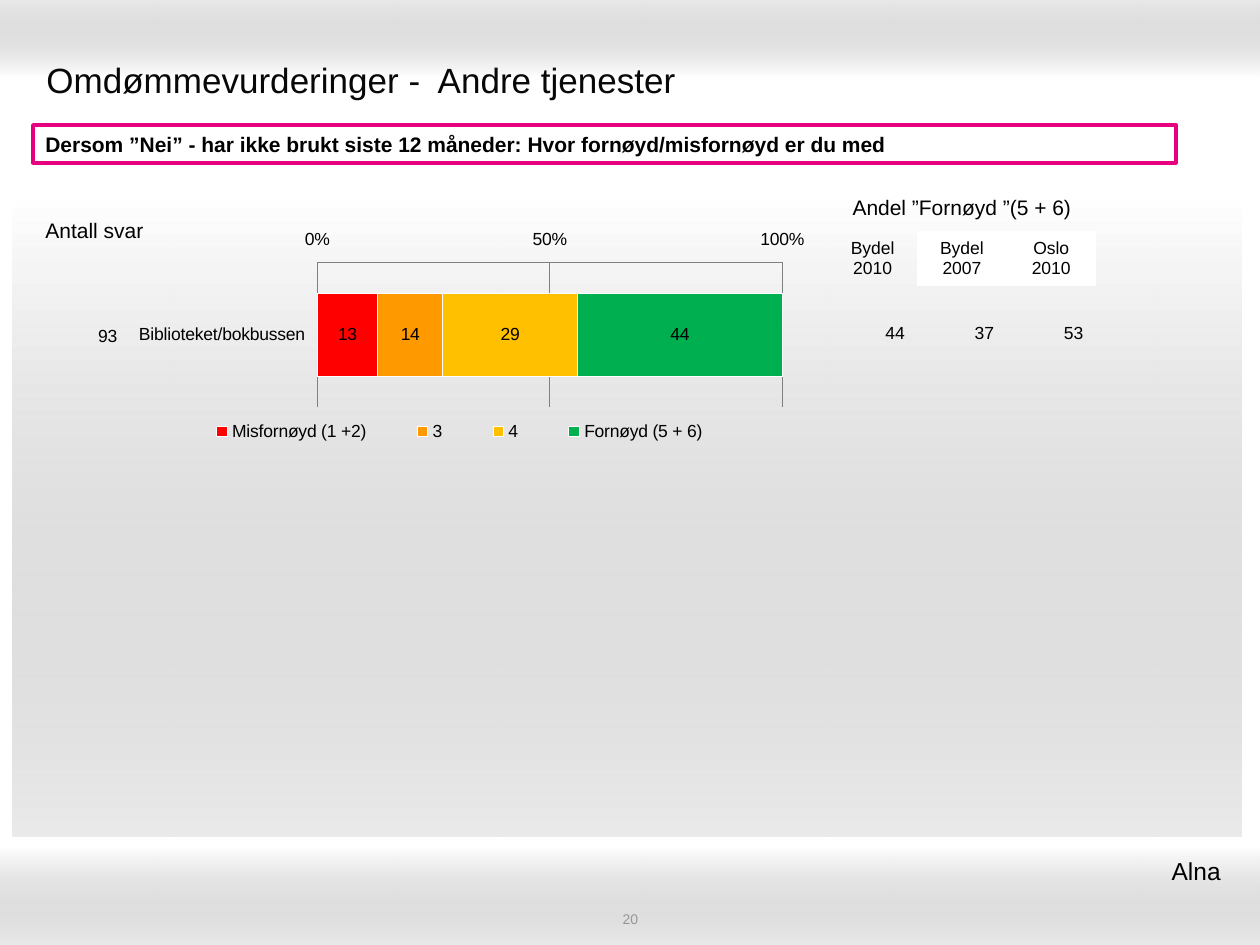
from dataclasses import dataclass

from lxml.etree import SubElement
from pptx import Presentation
from pptx.chart.data import CategoryChartData
from pptx.dml.color import RGBColor
from pptx.enum.chart import XL_CHART_TYPE as ChartType, XL_LEGEND_POSITION as LegendPos
from pptx.enum.chart import XL_TICK_LABEL_POSITION as LabelPos, XL_TICK_MARK as Tick
from pptx.enum.shapes import MSO_SHAPE as Shape
from pptx.enum.text import MSO_ANCHOR as Anchor, PP_ALIGN as Align
from pptx.oxml import parse_xml
from pptx.oxml.ns import nsdecls, qn
from pptx.util import Pt

EMU_PER_PX = 914400 / 126
NO_GRID_STYLE = "{2D5ABB26-0587-4C30-8999-92F81FD0307C}"


@dataclass(frozen=True)
class Theme:
    font: str = "Arial"
    ink: str = "000000"
    title_ink: str = "080808"
    muted: str = "969696"
    white: str = "FFFFFF"
    shade: str = "999999"
    accent: str = "E7007E"
    grid: str = "808080"
    title: int = 20
    place: int = 14
    heading: int = 12
    body: int = 10
    footer: int = 8


THEME = Theme()

RATINGS = [("Misfornøyd (1 +2)", 13, "FF0000"), ("3", 14, "FF9900"),
           ("4", 29, "FFC000"), ("Fornøyd (5 + 6)", 44, "00B050")]
SHARES = [("Bydel\n2010", "44"), ("Bydel\n2007", "37"), ("Oslo\n2010", "53")]


def px(value):
    return round(value * EMU_PER_PX)


def emu_box(box):
    return [px(side) for side in box]


def rgb(value):
    return RGBColor.from_string(value)


def apply_format(target, formats):
    for name, value in formats.items():
        setattr(target, name, value)


def style_font(font, size, color=THEME.ink, bold=False):
    apply_format(font, {"name": THEME.font, "size": Pt(size), "bold": bold})
    font.color.rgb = rgb(color)


def write(frame, text, size, color=THEME.ink, bold=False, align=Align.LEFT):
    frame.text = text
    for paragraph in frame.paragraphs:
        paragraph.alignment = align
        style_font(paragraph.font, size, color, bold)


def add_label(slide, box, text, size, color=THEME.ink, align=Align.LEFT, anchor=Anchor.MIDDLE):
    frame = slide.shapes.add_textbox(*emu_box(box)).text_frame
    apply_format(frame, {"word_wrap": True, "vertical_anchor": anchor})
    write(frame, text, size, color, align=align)


def add_gradient_panel(slide, box, angle):
    panel = slide.shapes.add_shape(Shape.RECTANGLE, *emu_box(box))
    panel.shadow.inherit = False
    panel.line.fill.background()
    panel.fill.background()
    properties = panel._element.spPr
    properties.replace(properties.find(qn("a:noFill")), parse_xml(
        f'<a:gradFill {nsdecls("a")} rotWithShape="1"><a:gsLst>'
        f'<a:gs pos="0"><a:srgbClr val="{THEME.white}"/></a:gs>'
        f'<a:gs pos="100000"><a:srgbClr val="{THEME.shade}"><a:alpha val="20000"/></a:srgbClr></a:gs>'
        f'</a:gsLst><a:lin ang="{angle * 60000}" scaled="0"/></a:gradFill>'))


def add_question(slide, box):
    question = slide.shapes.add_shape(Shape.RECTANGLE, *emu_box(box))
    question.shadow.inherit = False
    question.fill.solid()
    question.fill.fore_color.rgb = rgb(THEME.white)
    question.line.color.rgb = rgb(THEME.accent)
    question.line.width = Pt(2)
    question.text_frame.word_wrap = True
    write(question.text_frame,
          "Dersom ”Nei” - har ikke brukt siste 12 måneder: Hvor fornøyd/misfornøyd er du med",
          THEME.heading, bold=True)


def add_plain_table(slide, box, row_heights, column_count):
    table = slide.shapes.add_table(len(row_heights), column_count, *emu_box(box)).table
    table._tbl.tblPr.find(qn("a:tableStyleId")).text = NO_GRID_STYLE
    apply_format(table, {"first_row": False, "horz_banding": False})
    for row, height in zip(table.rows, row_heights):
        row.height = px(height)
    for cell in table.iter_cells():
        cell.fill.background()
        cell.vertical_anchor = Anchor.MIDDLE
    return table


def add_single_cell(slide, box, text, size, align):
    cell = add_plain_table(slide, box, [box[3]], 1).cell(0, 0)
    write(cell.text_frame, text, size, align=align)


def add_shares(slide, box):
    """Heading table above a table with the satisfied shares."""
    left, top, width, _ = box
    heading = add_plain_table(slide, (left, top, width, 101), [46, 55], len(SHARES))
    heading.cell(0, 0).merge(heading.cell(0, len(SHARES) - 1))
    write(heading.cell(0, 0).text_frame, "Andel ”Fornøyd ”(5 + 6)", THEME.heading, align=Align.CENTER)
    values = add_plain_table(slide, (left, top + 103, width, 91), [91], len(SHARES))
    for column, (area, share) in enumerate(SHARES):
        area_cell = heading.cell(1, column)
        write(area_cell.text_frame, area, THEME.body, align=Align.CENTER)
        if column:
            area_cell.fill.solid()
            area_cell.fill.fore_color.rgb = rgb(THEME.white)
        write(values.cell(0, column).text_frame, share, THEME.body, align=Align.RIGHT)


def set_layout(part, target, x, y, w, h):
    """Fix a chart part at fractions of the chart area."""
    layout = part.get_or_add_layout() if hasattr(part, "get_or_add_layout") else part.find(qn("c:layout"))
    if layout is None:
        layout = SubElement(part, qn("c:layout"))
        part.insert(0, layout)
    for child in list(layout):
        layout.remove(child)
    manual = SubElement(layout, qn("c:manualLayout"))
    values = {"layoutTarget": target, "xMode": "edge", "yMode": "edge", "x": x, "y": y, "w": w, "h": h}
    for name, value in values.items():
        if value is not None:
            SubElement(manual, qn(f"c:{name}")).set("val", str(value))


def add_rating_chart(slide, box):
    data = CategoryChartData()
    data.categories = ["Biblioteket/bokbussen"]
    for name, share, _ in RATINGS:
        data.add_series(name, [share])
    chart = slide.shapes.add_chart(ChartType.BAR_STACKED, *emu_box(box), data).chart
    style_font(chart.font, THEME.body)
    apply_format(chart, {"has_title": False, "has_legend": True})
    apply_format(chart.legend, {"position": LegendPos.BOTTOM, "include_in_layout": False})

    # Bars
    plot = chart.plots[0]
    apply_format(plot, {"gap_width": 75, "overlap": 100, "vary_by_categories": False})
    for series, (_, _, color) in zip(plot.series, RATINGS):
        series.format.fill.solid()
        series.format.fill.fore_color.rgb = rgb(color)
        series.format.line.color.rgb = rgb(THEME.white)
        apply_format(series.data_labels, {"show_value": True, "number_format": "0",
                                          "number_format_is_linked": False})
        style_font(series.data_labels.font, THEME.body)

    # Axes
    apply_format(chart.category_axis, {"reverse_order": True, "major_tick_mark": Tick.NONE,
                                       "tick_label_position": LabelPos.LOW})
    scale = chart.value_axis
    apply_format(scale, {"minimum_scale": 0, "maximum_scale": 100, "major_unit": 50,
                         "major_tick_mark": Tick.INSIDE, "tick_label_position": LabelPos.LOW,
                         "has_major_gridlines": True})
    apply_format(scale.tick_labels, {"number_format": "General\\%", "number_format_is_linked": False})
    for line in (chart.category_axis.format.line, scale.format.line, scale.major_gridlines.format.line):
        line.color.rgb = rgb(THEME.grid)
        line.width = Pt(0.75)

    set_layout(chart._chartSpace.chart.plotArea, "inner", 0.28, 0.16, 0.67, 0.64)
    set_layout(chart.legend._element, None, 0.07, 0.84, 0.83, 0.13)


def build_slide(deck):
    slide = deck.slides.add_slide(deck.slide_layouts[6])
    # Background bands and panel
    add_gradient_panel(slide, (0, 0, 1260, 78), 270)
    add_gradient_panel(slide, (0, 847, 1260, 98), 90)
    add_gradient_panel(slide, (13, 197, 1228, 640), 90)
    # Title, page number and question
    add_label(slide, (34, 45, 1191, 69), "Omdømmevurderinger -  Andre tjenester", THEME.title, THEME.title_ink)
    add_label(slide, (431, 910, 399, 18), "20", THEME.footer, THEME.muted, Align.CENTER)
    add_question(slide, (33, 125, 1143, 38))
    # Ratings, shares and number of answers
    add_rating_chart(slide, (123, 226, 694, 227))
    add_shares(slide, (828, 185, 268, 194))
    add_single_cell(slide, (64, 292, 66, 89), "93", THEME.body, Align.RIGHT)
    add_single_cell(slide, (5, 194, 179, 74), "Antall svar", THEME.heading, Align.CENTER)
    # District
    add_label(slide, (769, 850, 471, 72), "Alna ", THEME.place, align=Align.RIGHT, anchor=Anchor.TOP)


def main():
    deck = Presentation()
    apply_format(deck, {"slide_width": px(1260), "slide_height": px(945)})
    build_slide(deck)
    deck.save("out.pptx")


if __name__ == "__main__":
    main()
